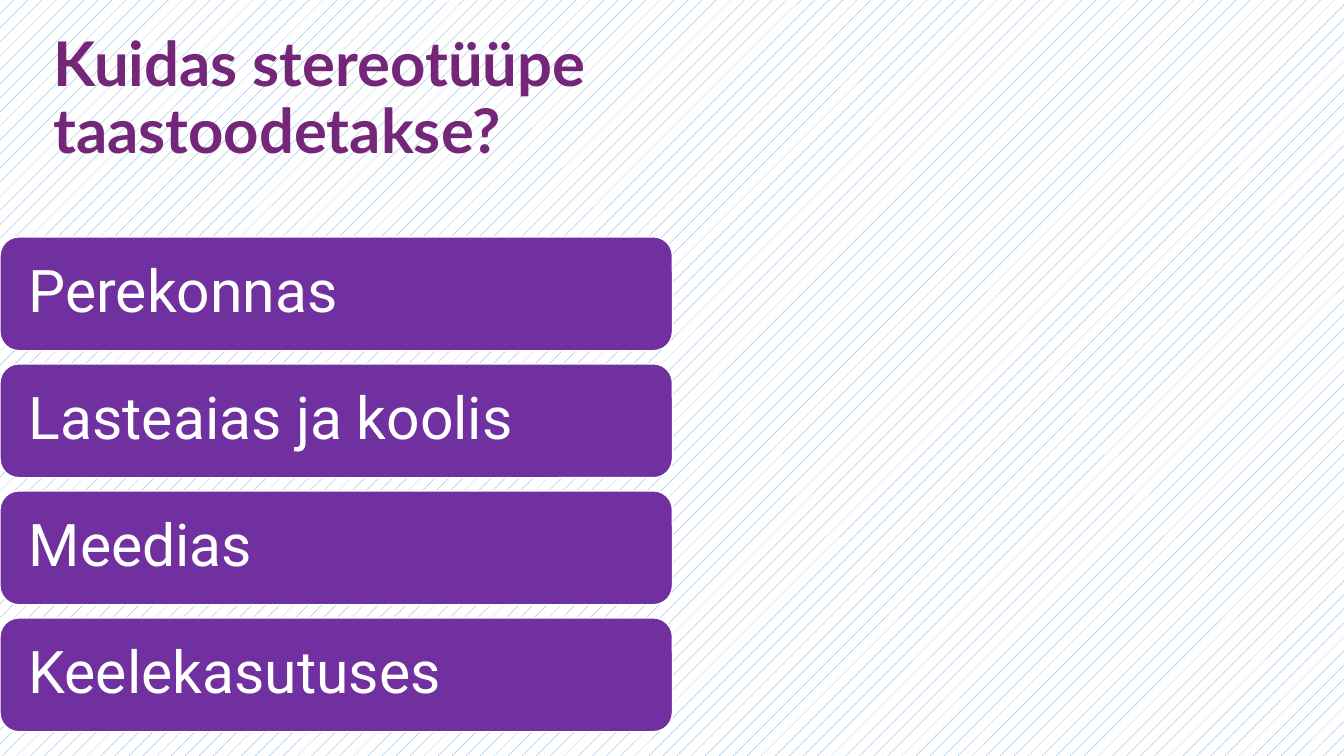
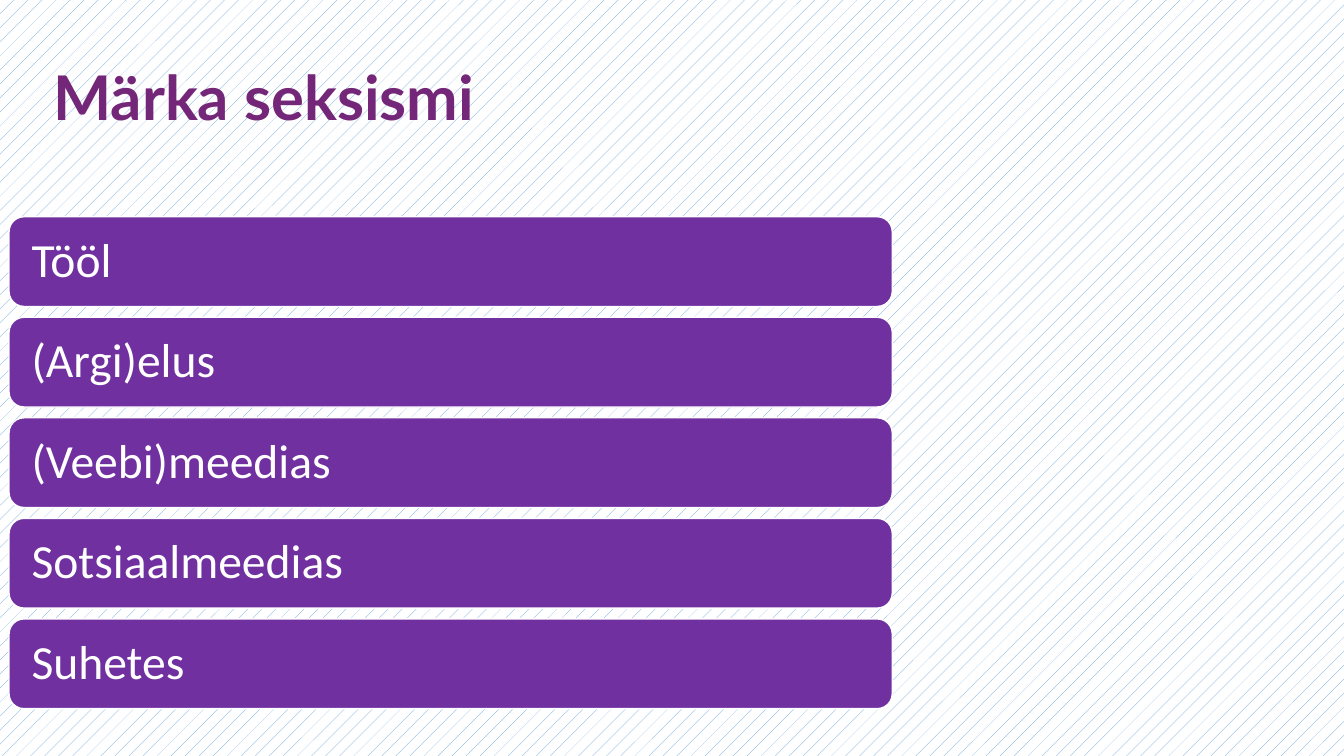
from pptx import Presentation
from pptx.dml.color import RGBColor
from pptx.enum.dml import MSO_PATTERN
from pptx.enum.shapes import MSO_SHAPE
from pptx.enum.text import MSO_ANCHOR, MSO_AUTO_SIZE, PP_ALIGN
from pptx.util import Inches, Pt

WHITE, PLUM, PURPLE, BLUE = "FFFFFF", "742778", "7030A0", "5B9BD5"
TITLE_BOX = (0.43, 0.23, 8.19, 1.53)
TITLE_STYLE = dict(font="Lato", size=44, color=PLUM, bold=True)

SLIDES = [
    dict(
        title="Kuidas stereotüüpe taastoodetakse?",
        topics=["Perekonnas", "Lasteaias ja koolis", "Meedias", "Keelekasutuses"],
        left=0, width=6.67, height=1.13, first_top=2.35, last_top=6.13,
        style=dict(font="Roboto", size=42, color=WHITE, inset=0.23),
    ),
    dict(
        title="Märka seksismi",
        topics=["Tööl", "(Argi)elus", "(Veebi)meedias", "Sotsiaalmeedias", "Suhetes"],
        left=0.09, width=8.76, height=0.89, first_top=2.15, last_top=6.14,
        style=dict(font="Calibri", size=34, color=WHITE, inset=0.18),
    ),
]


def rgb(value):
    return RGBColor.from_string(value)


def write(shape, text, *, font, size, color, bold=False, inset=0.1):
    frame = shape.text_frame
    frame.text = text
    frame.word_wrap = True
    frame.auto_size = MSO_AUTO_SIZE.NONE
    frame.vertical_anchor = MSO_ANCHOR.MIDDLE
    frame.margin_left = frame.margin_right = Inches(inset)
    frame.margin_top = frame.margin_bottom = Inches(0.05)
    paragraph = frame.paragraphs[0]
    paragraph.alignment = PP_ALIGN.LEFT
    paragraph.line_spacing = 0.9
    run_font = paragraph.runs[0].font
    run_font.name = font
    run_font.size = Pt(size)
    run_font.bold = bold
    run_font.color.rgb = rgb(color)


def set_background(master):
    fill = master.background.fill
    fill.patterned()
    fill.pattern = MSO_PATTERN.PERCENT_5
    fill.fore_color.rgb = rgb(BLUE)
    fill.back_color.rgb = rgb(WHITE)


def add_bar(slide, topic, box, style):
    bar = slide.shapes.add_shape(MSO_SHAPE.ROUNDED_RECTANGLE, *map(Inches, box))
    bar.shadow.inherit = False
    bar.fill.solid()
    bar.fill.fore_color.rgb = rgb(PURPLE)
    bar.line.color.rgb = rgb(WHITE)
    bar.line.width = Pt(1)
    write(bar, topic, **style)


def add_topic_slide(prs, content):
    slide = prs.slides.add_slide(prs.slide_layouts.get_by_name("Title Only"))
    title = slide.shapes.title
    title.left, title.top, title.width, title.height = map(Inches, TITLE_BOX)
    write(title, content["title"], **TITLE_STYLE)
    topics = content["topics"]
    pitch = (content["last_top"] - content["first_top"]) / (len(topics) - 1)
    for index, topic in enumerate(topics):
        top = content["first_top"] + index * pitch
        box = (content["left"], top, content["width"], content["height"])
        add_bar(slide, topic, box, content["style"])


def main():
    prs = Presentation()
    prs.slide_width, prs.slide_height = Inches(13.33), Inches(7.5)
    set_background(prs.slide_master)
    for content in SLIDES:
        add_topic_slide(prs, content)
    prs.save("out.pptx")


if __name__ == "__main__":
    main()
